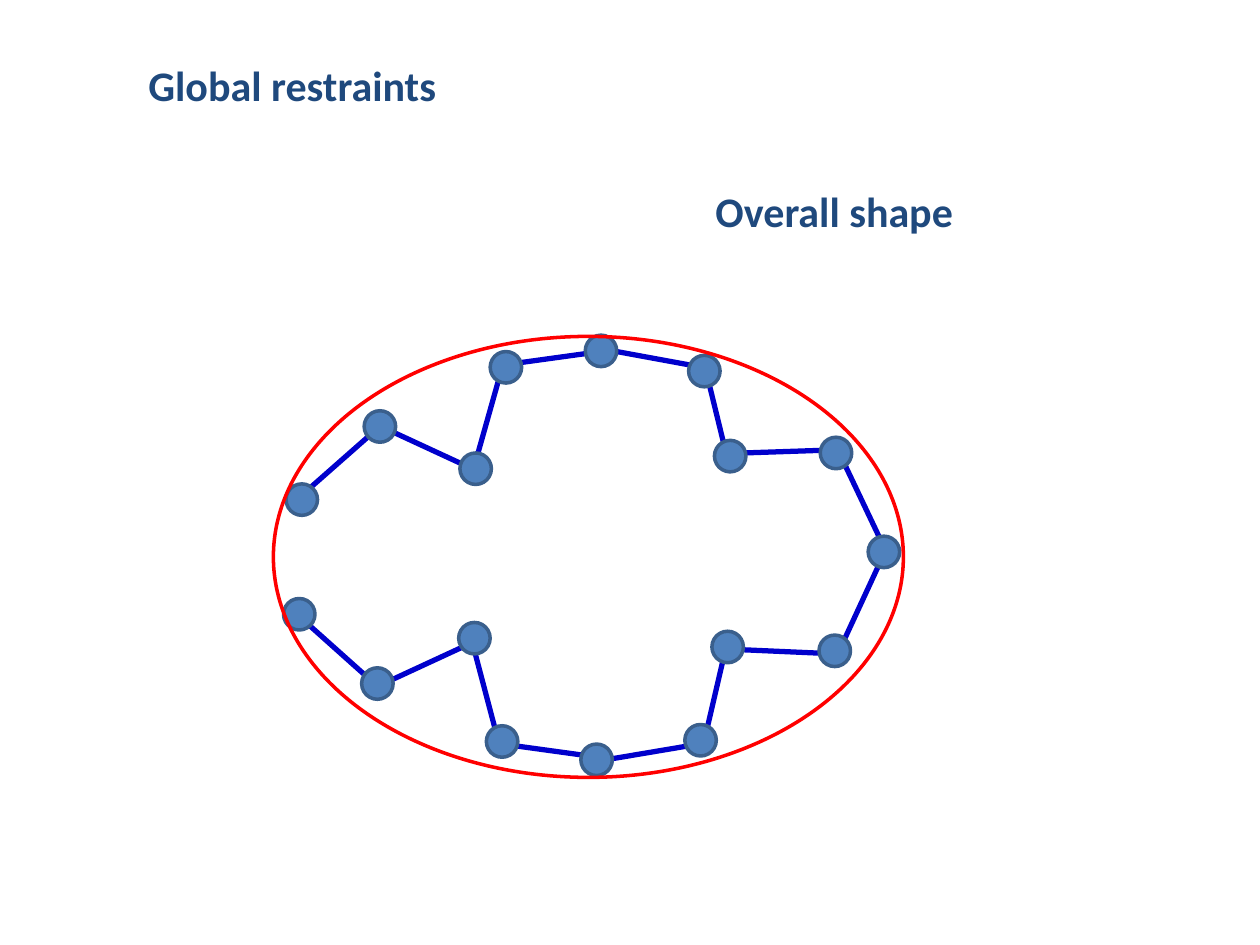
from typing import NamedTuple, Optional

from lxml.etree import SubElement
from pptx import Presentation
from pptx.dml.color import RGBColor
from pptx.enum.shapes import MSO_CONNECTOR as Link, MSO_SHAPE as Kind
from pptx.enum.text import MSO_AUTO_SIZE as Fit
from pptx.oxml.ns import qn
from pptx.util import Inches, Pt

COLS, ROWS = 100, 75
SIZE = 2.5  # bead width in columns
NAVY, BLUE, STEEL, EDGE, RED = "1F497D", "0000CC", "4F81BD", "3A5F8C", "FF0000"


class Rod(NamedTuple):
    x1: float
    y1: float
    x2: float
    y2: float


class Bead(NamedTuple):
    """Centre of a bead and the rod that leads on to the next one."""
    x: float
    y: float
    rod: Optional[Rod] = None


LOWER = [
    Bead(23.75, 48.75, Rod(23.4, 48.6, 30, 54.5)),
    Bead(29.95, 54.25, Rod(29.7, 54.6, 37.7, 50.9)),
    Bead(37.65, 50.65, Rod(37.3, 50.3, 39.6, 59)),
    Bead(39.85, 58.85, Rod(39.5, 59, 48.2, 60.2)),
    Bead(47.35, 60.3, Rod(46.9, 60.5, 55.8, 59)),
    Bead(55.6, 58.75, Rod(55.8, 59.2, 57.8, 50.6)),
    Bead(57.75, 51.35, Rod(57.4, 51.5, 66.4, 51.9)),
    Bead(66.25, 51.65, Rod(66.3, 52.3, 70, 44.3)),
]
UPPER = [
    Bead(23.95, 39.65, Rod(23.5, 39.7, 30.2, 33.8)),
    Bead(30.15, 33.85, Rod(29.7, 33.6, 37.7, 37.3)),
    Bead(37.75, 37.2, Rod(37.5, 37.5, 39.9, 29)),
    Bead(40.15, 29.15, Rod(39.7, 29, 48.4, 27.8)),
    Bead(47.7, 27.85, Rod(47.3, 27.6, 56, 29.2)),
    Bead(55.9, 29.45, Rod(55.9, 28.9, 58, 37.5)),
    Bead(57.95, 36.2, Rod(57.5, 36, 66.5, 35.7)),
    Bead(66.35, 35.95, Rod(66.4, 35.5, 70.2, 43.5)),
    Bead(70.15, 43.8),
]

deck = Presentation()
deck.slide_width, deck.slide_height = Inches(10), Inches(7.5)
slide = deck.slides.add_slide(deck.slide_layouts[6])
shapes = slide.shapes


def col(n: float) -> int:
    return round(deck.slide_width * n / COLS)


def row(n: float) -> int:
    return round(deck.slide_height * n / ROWS)


def rgb(code: str) -> RGBColor:
    return RGBColor.from_string(code)


def text(words: str, x: float, y: float, w: float, h: float, *,
         size: float = 24, bold: bool = True, color: str = NAVY) -> None:
    frame = shapes.add_textbox(col(x), row(y), col(w), row(h)).text_frame
    frame.word_wrap = True
    frame.auto_size = Fit.SHAPE_TO_FIT_TEXT
    run = frame.paragraphs[0].add_run()
    run.text = words
    font = run.font
    font.name, font.size, font.bold = "Calibri", Pt(size), bold
    font.color.rgb = rgb(color)


def oval(x: float, y: float, w: float, h: float, edge: str,
         fill: Optional[str] = None) -> None:
    shape = shapes.add_shape(Kind.OVAL, col(x), row(y), col(w), row(h))
    shape.shadow.inherit = False
    if fill:
        shape.fill.solid()
        shape.fill.fore_color.rgb = rgb(fill)
    else:
        shape.fill.background()
    shape.line.color.rgb = rgb(edge)
    shape.line.width = Pt(2)


def join(rod: Rod) -> None:
    line = shapes.add_connector(Link.STRAIGHT, col(rod.x1), row(rod.y1),
                                col(rod.x2), row(rod.y2))
    line.line.color.rgb = rgb(BLUE)
    line.line.width = Pt(3)
    SubElement(line._element.spPr, qn("a:effectLst"))


def chain(beads: list[Bead]) -> None:
    for bead in beads:
        if bead.rod:
            join(bead.rod)
        oval(bead.x - SIZE / 2, bead.y - SIZE / 2, SIZE, SIZE, EDGE, STEEL)


text("Global restraints", 10.8, 4.2, 51.7, 5)
chain(LOWER)
chain(UPPER)
text("Overall shape", 55.8, 14.2, 27.5, 5)
oval(21.7, 26.7, 50, 35, RED)

deck.save("out.pptx")
